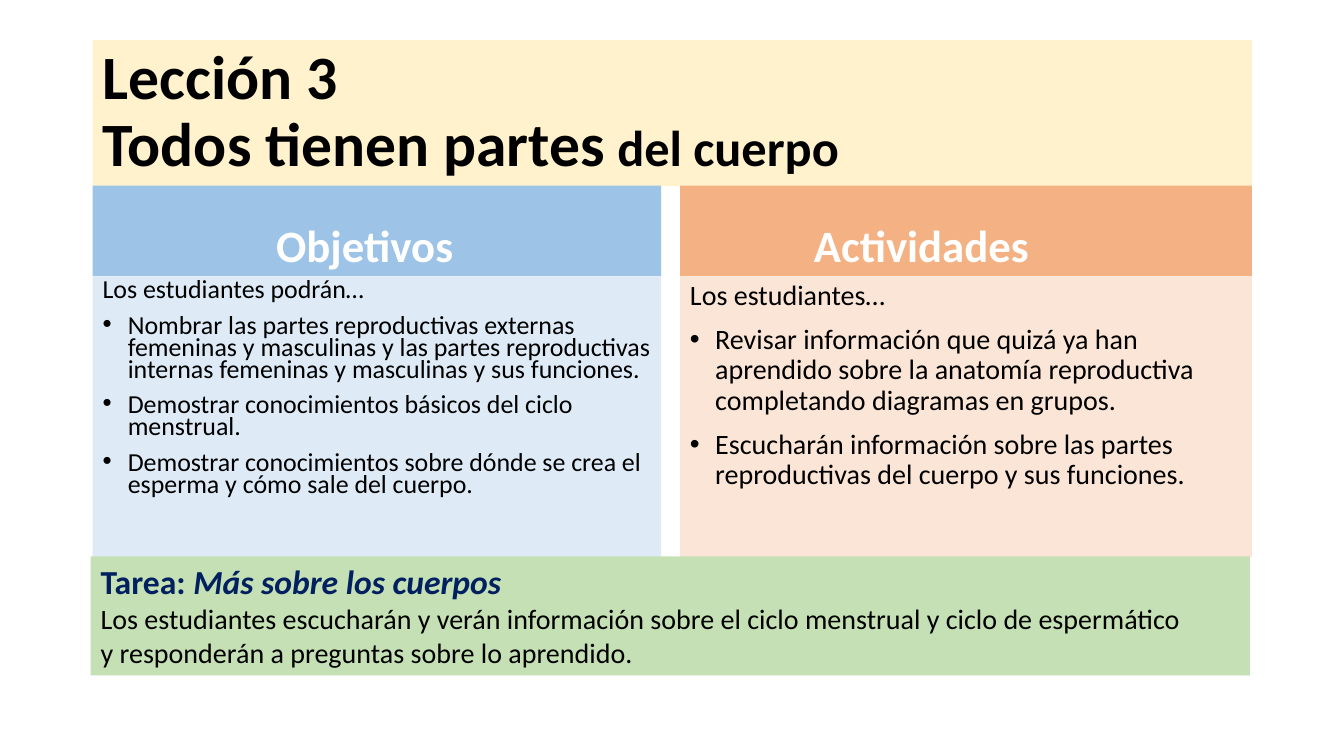
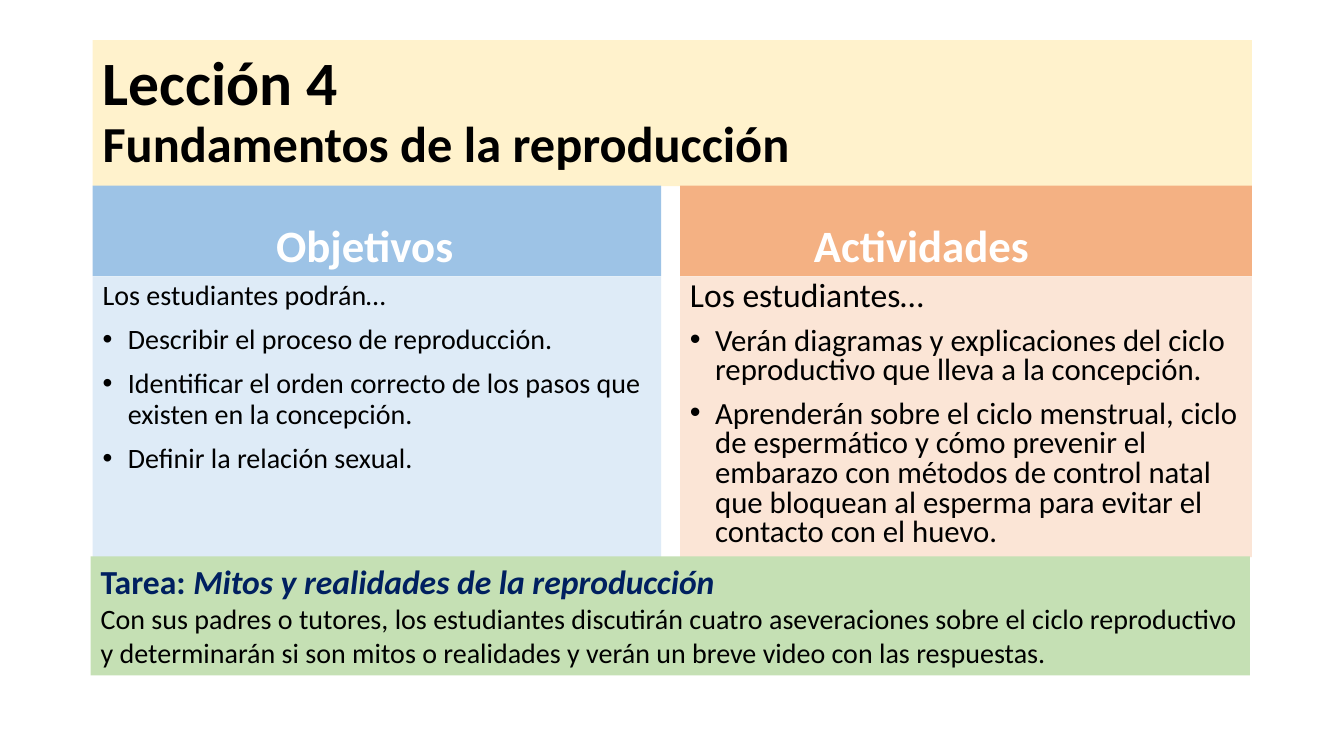
from dataclasses import dataclass

from lxml.etree import SubElement
from pptx import Presentation
from pptx.dml.color import RGBColor as RGB
from pptx.enum.shapes import MSO_SHAPE as SHAPE
from pptx.enum.text import MSO_ANCHOR as ANCHOR, PP_ALIGN as ALIGN
from pptx.oxml.ns import qn
from pptx.util import Inches, Pt


@dataclass(frozen=True)
class Theme:
    font: str = "Calibri"
    text: str = "000000"
    light: str = "FFFFFF"
    accent: str = "002060"
    title_fill: str = "FFF2CC"
    goals_head: str = "9DC3E6"
    goals_body: str = "DEEBF7"
    tasks_head: str = "F4B183"
    tasks_body: str = "FBE5D6"
    homework_fill: str = "C5E0B4"
    title: float = 44
    subtitle: float = 36
    heading: float = 32
    label: float = 24
    large: float = 22
    body: float = 20
    compact: float = 18.5
    para_gap: float = 10
    indent: float = 0.25


T = Theme()
LEFT, WIDTH, GAP = 6.9, 86.25, 1.4
GOALS_W = 42.3
TASKS_X = LEFT + GOALS_W + GAP
TASKS_W = LEFT + WIDTH - TASKS_X
TITLE_Y, HEAD_Y, BODY_Y, HOMEWORK_Y = 5.33, 24.55, 36.55, 73.6
HOMEWORK_X, HOMEWORK_H = 6.75, 15.73


class Deck:
    """Build lesson slides, with lengths in percent of the slide size."""

    def __init__(self):
        self.prs = Presentation()
        self.prs.slide_width, self.prs.slide_height = Inches(13.33), Inches(7.5)
        self.s = None

    def new_slide(self):
        self.s = self.prs.slides.add_slide(self.prs.slide_layouts[6])

    def panel(self, x, y, w, h, fill, anchor=ANCHOR.TOP):
        pw, ph = self.prs.slide_width / 100, self.prs.slide_height / 100
        box = (round(x * pw), round(y * ph), round(w * pw), round(h * ph))
        sp = self.s.shapes.add_shape(SHAPE.RECTANGLE, *box)
        sp.shadow.inherit = False
        sp.fill.solid()
        sp.fill.fore_color.rgb = RGB.from_string(fill)
        sp.line.fill.background()
        tf = sp.text_frame
        tf.word_wrap, tf.vertical_anchor = True, anchor
        return tf

    def style(self, r, size, color=T.text, bold=False, italic=False):
        f = r.font
        f.name, f.size, f.bold, f.italic = T.font, Pt(size), bold, italic
        f.color.rgb = RGB.from_string(color)

    def add_lines(self, tf, lines, spacing=1.0, align=ALIGN.LEFT):
        for i, runs in enumerate(lines):
            p = tf.add_paragraph() if i else tf.paragraphs[0]
            p.alignment, p.line_spacing = align, spacing
            for text, look in runs:
                r = p.add_run()
                r.text = text
                self.style(r, **look)

    def title(self, lines):
        tf = self.panel(LEFT, TITLE_Y, WIDTH, HEAD_Y - TITLE_Y + 0.1,
                        T.title_fill, ANCHOR.MIDDLE)
        self.add_lines(tf, [[(text, dict(size=size, bold=True))
                             for text, size in line] for line in lines], 0.9)

    def heading(self, x, w, text, fill, right_inset):
        tf = self.panel(x, HEAD_Y, w, BODY_Y - HEAD_Y, fill, ANCHOR.BOTTOM)
        tf.margin_right = Inches(right_inset)
        look = dict(size=T.heading, color=T.light, bold=True)
        self.add_lines(tf, [[(text, look)]], align=ALIGN.CENTER)

    def bullets(self, x, w, fill, intro, items, size, spacing, intro_size=None):
        tf = self.panel(x, BODY_Y, w, HOMEWORK_Y - BODY_Y + 0.1, fill)
        lines = [[(intro, dict(size=intro_size or size))]]
        lines += [[(item, dict(size=size))] for item in items]
        self.add_lines(tf, lines, spacing)
        for p in tf.paragraphs[1:]:
            p.space_before = Pt(T.para_gap)
            pPr = p._p.get_or_add_pPr()
            pPr.set("marL", str(Inches(T.indent)))
            pPr.set("indent", str(-Inches(T.indent)))
            SubElement(pPr, qn("a:buFont")).set("typeface", "Arial")
            SubElement(pPr, qn("a:buChar")).set("char", "•")

    def homework(self, name, lines):
        tf = self.panel(HOMEWORK_X, HOMEWORK_Y, WIDTH, HOMEWORK_H,
                        T.homework_fill)
        look = dict(size=T.label, color=T.accent, bold=True)
        label = [("Tarea: ", look), (name, dict(look, italic=True))]
        self.add_lines(tf, [label] + [[(t, dict(size=T.body))] for t in lines])

    def lesson(self, title, goals, tasks, homework):
        self.new_slide()
        self.title(title)
        self.heading(LEFT, GOALS_W, "Objetivos", T.goals_head, 0.34)
        self.bullets(LEFT, GOALS_W, T.goals_body,
                     "Los estudiantes podrán…", **goals)
        self.heading(TASKS_X, TASKS_W, "Actividades", T.tasks_head, 0.98)
        self.bullets(TASKS_X, TASKS_W, T.tasks_body,
                     "Los estudiantes…", **tasks)
        self.homework(*homework)


LESSONS = [
    dict(
        title=[[("Lección 3", T.title)],
               [("Todos tienen partes", T.title),
                (" del cuerpo", T.subtitle)]],
        goals=dict(size=T.compact, spacing=0.7, items=[
            "Nombrar las partes reproductivas externas femeninas y masculinas "
            "y las partes reproductivas internas femeninas y masculinas y sus "
            "funciones.",
            "Demostrar conocimientos básicos del ciclo menstrual.",
            "Demostrar conocimientos sobre dónde se crea el esperma y cómo "
            "sale del cuerpo."]),
        tasks=dict(size=T.body, spacing=0.9, items=[
            "Revisar información que quizá ya han aprendido sobre la anatomía "
            "reproductiva completando diagramas en grupos.",
            "Escucharán información sobre las partes reproductivas del cuerpo "
            "y sus funciones."]),
        homework=("Más sobre los cuerpos", [
            "Los estudiantes escucharán y verán información sobre el ciclo "
            "menstrual y ciclo de espermático",
            "y responderán a preguntas sobre lo aprendido."]),
    ),
    dict(
        title=[[("Lección 4", T.title)],
               [("Fundamentos de la reproducción", T.subtitle)]],
        goals=dict(size=T.body, spacing=0.9, items=[
            "Describir el proceso de reproducción.",
            "Identificar el orden correcto de los pasos que existen en la "
            "concepción.",
            "Definir la relación sexual."]),
        tasks=dict(size=T.large, spacing=0.8, intro_size=T.label, items=[
            "Verán diagramas y explicaciones del ciclo reproductivo que lleva "
            "a la concepción.",
            "Aprenderán sobre el ciclo menstrual, ciclo de espermático y cómo "
            "prevenir el embarazo con métodos de control natal que bloquean al "
            "esperma para evitar el contacto con el huevo."]),
        homework=("Mitos y realidades de la reproducción", [
            "Con sus padres o tutores, los estudiantes discutirán cuatro "
            "aseveraciones sobre el ciclo reproductivo y determinarán si son "
            "mitos o realidades y verán un breve video con las respuestas."]),
    ),
]


def main():
    deck = Deck()
    for lesson in LESSONS:
        deck.lesson(**lesson)
    deck.prs.save("out.pptx")


if __name__ == "__main__":
    main()
